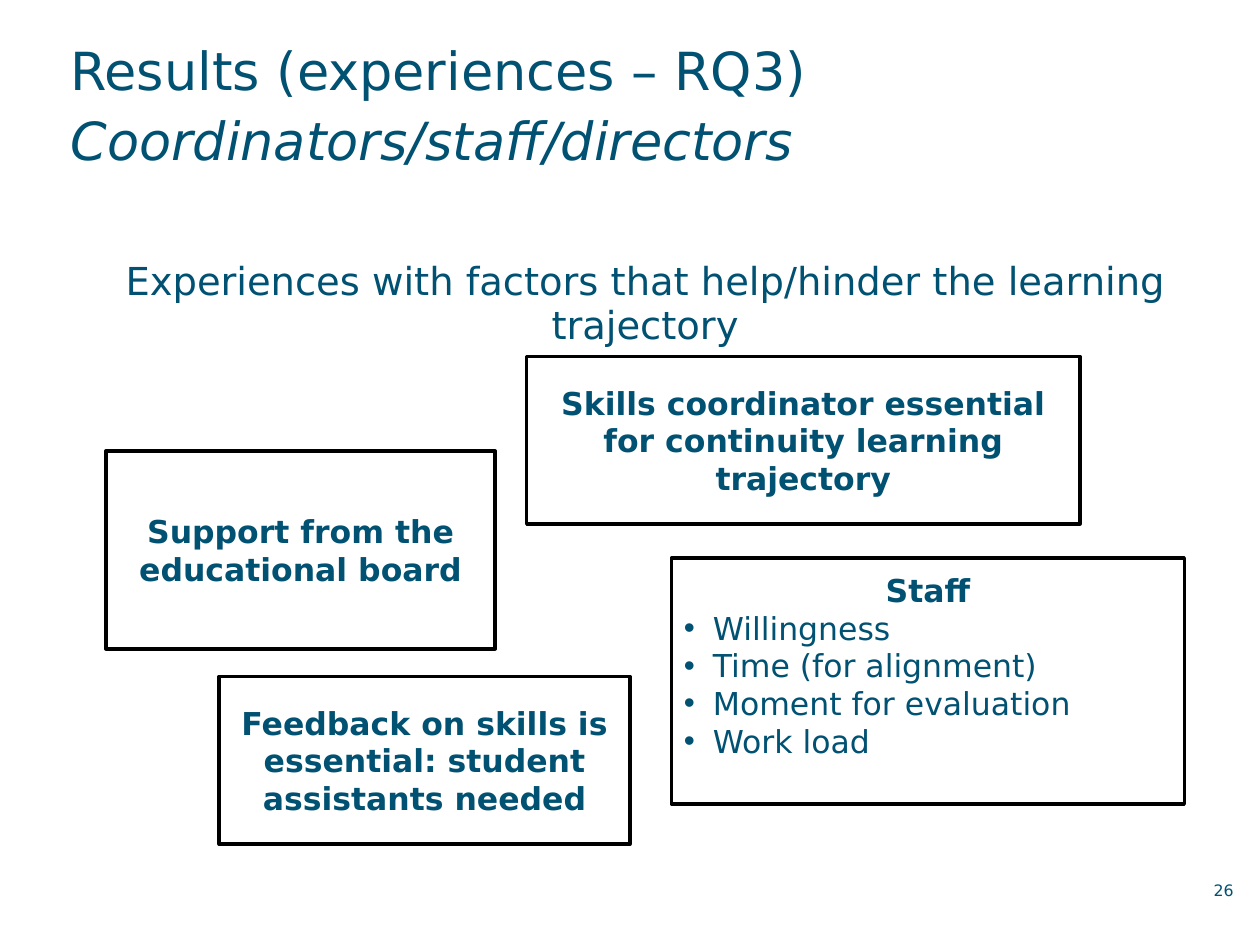
from lxml.etree import SubElement
from pptx import Presentation
from pptx.dml.color import RGBColor
from pptx.enum.shapes import MSO_SHAPE
from pptx.enum.text import MSO_ANCHOR, MSO_AUTO_SIZE, PP_ALIGN
from pptx.oxml.ns import qn
from pptx.util import Inches, Pt

FONT = "DejaVu Sans"
COLORS = {"text": "005172", "line": "000000", "fill": "FFFFFF"}

TITLE = ("Results (experiences – RQ3)", "Coordinators/staff/directors")
LEAD = "Experiences with factors that help/hinder the learning trajectory"
NUMBER = "26"
# heading, bullets, (left, top, width, height)
CARDS = [
    ("Skills coordinator essential for continuity learning trajectory", [],
     (4.18, 2.83, 4.39, 1.33)),
    ("Staff",
     ["Willingness", "Time (for alignment)", "Moment for evaluation", "Work load"],
     (5.33, 4.43, 4.07, 1.95)),
    ("Support from the educational board", [], (0.84, 3.58, 3.09, 1.57)),
    ("Feedback on skills is essential: student assistants needed", [],
     (1.74, 5.37, 3.26, 1.33)),
]


def color(name):
    return RGBColor.from_string(COLORS[name])


def place(shape, box):
    shape.left, shape.top, shape.width, shape.height = map(Inches, box)


def inset(frame, left, top, right, bottom):
    frame.margin_left, frame.margin_top = Inches(left), Inches(top)
    frame.margin_right, frame.margin_bottom = Inches(right), Inches(bottom)


def style(para, size, align, bold=False, pitch=None):
    """Format a paragraph; pitch is its exact line height in points."""
    para.alignment = align
    para.space_before = Pt(0)
    if pitch:
        para.line_spacing = Pt(pitch)
    font = para.font
    font.name, font.size, font.bold = FONT, Pt(size), bold
    font.color.rgb = color("text")


def bullet(para, char=None, indent=0):
    """Set a hanging bullet, or remove the inherited one if char is None."""
    props = para._p.get_or_add_pPr()
    props.set("marL", str(Inches(indent)))
    props.set("indent", str(-Inches(indent)))
    if char:
        SubElement(props, qn("a:buFont")).set("typeface", "Arial")
        SubElement(props, qn("a:buChar")).set("char", char)
    else:
        SubElement(props, qn("a:buNone"))


def add_card(slide, head, items, box):
    card = slide.shapes.add_shape(MSO_SHAPE.RECTANGLE, *map(Inches, box))
    card.shadow.inherit = False
    card.fill.solid()
    card.fill.fore_color.rgb = color("fill")
    card.line.color.rgb = color("line")
    card.line.width = Pt(2)
    frame = card.text_frame
    frame.word_wrap = True
    frame.vertical_anchor = MSO_ANCHOR.TOP if items else MSO_ANCHOR.MIDDLE
    if items:
        frame.margin_top = Inches(0.1)
    first = frame.paragraphs[0]
    first.text = head
    style(first, 18, PP_ALIGN.CENTER, bold=True)
    for item in items:
        para = frame.add_paragraph()
        para.text = item
        bullet(para, "•", 0.23)
        style(para, 18, PP_ALIGN.LEFT)


def main():
    deck = Presentation()
    deck.slide_width, deck.slide_height = Inches(10), Inches(7.5)
    slide = deck.slides.add_slide(deck.slide_layouts[1])

    title, body = slide.shapes.title, slide.placeholders[1]
    place(title, (0.54, 0.25, 9.23, 1.41))
    place(body, (0.46, 2.01, 9.32, 4.47))
    for shape in (title, body):
        shape.text_frame.auto_size = MSO_AUTO_SIZE.NONE
        shape.text_frame.vertical_anchor = MSO_ANCHOR.TOP
    inset(title.text_frame, 0.02, 0, 0.1, 0.35)

    para = title.text_frame.paragraphs[0]
    para.add_run().text = TITLE[0]
    para.add_line_break()
    run = para.add_run()
    run.text = TITLE[1]
    run.font.italic = True
    style(para, 30, PP_ALIGN.LEFT, pitch=40)

    lead = body.text_frame.paragraphs[0]
    lead.text = LEAD
    bullet(lead)
    style(lead, 22, PP_ALIGN.CENTER, pitch=25)

    number = slide.shapes.add_textbox(*map(Inches, (9.32, 6.97, 0.51, 0.18)))
    number.text_frame.word_wrap = True
    inset(number.text_frame, 0.1, 0, 0.04, 0)
    para = number.text_frame.paragraphs[0]
    para.text = NUMBER
    style(para, 9, PP_ALIGN.RIGHT, pitch=12)

    for card in CARDS:
        add_card(slide, *card)
    deck.save("out.pptx")


if __name__ == "__main__":
    main()
